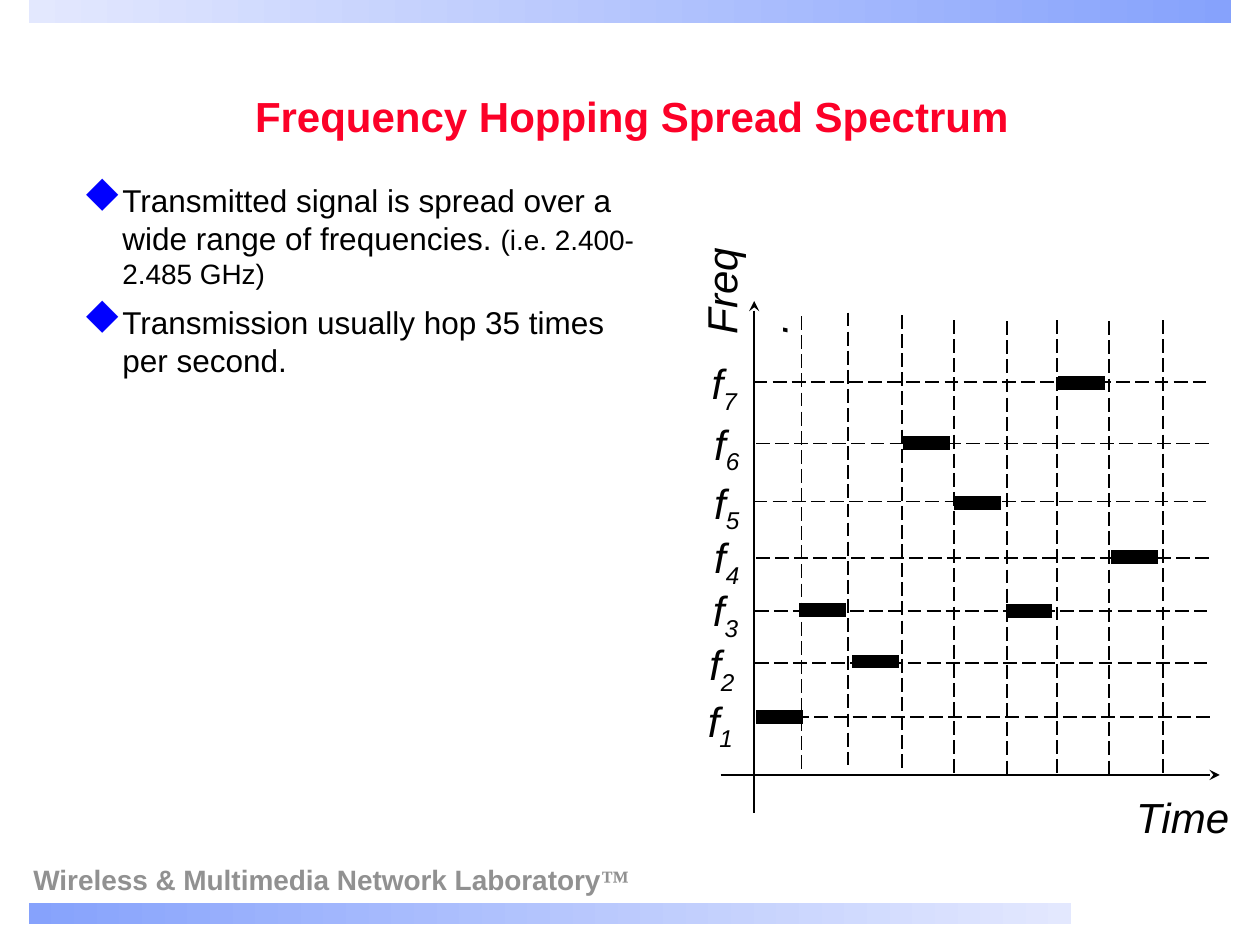
"""Build the frequency hopping spread spectrum slide."""
from typing import NamedTuple

from lxml import etree
from pptx import Presentation
from pptx import util as u
from pptx.dml.color import RGBColor
from pptx.enum import dml, shapes, text
from pptx.oxml.ns import qn

BLACK = RGBColor(0x00, 0x00, 0x00)
RED = RGBColor(0xFC, 0x01, 0x28)
GREY = RGBColor(0x91, 0x91, 0x91)
BLUE = RGBColor(0x86, 0xA2, 0xFC)
PALE_BLUE = RGBColor(0xE3, 0xE8, 0xFE)
BULLET_COLOR = RGBColor(0x00, 0x00, 0xFF)
BULLET_FONT = "Wingdings"
BULLET_DIAMOND = "u"

GRID_LENGTH = 258.7
HOP_LENGTH = 26.8


class Run(NamedTuple):
    words: str
    size: float
    color: RGBColor = BLACK
    font: str = "Arial"
    bold: bool = False
    italic: bool = False
    baseline: int = 0


class Box(NamedTuple):
    left: float
    top: float
    width: float
    height: float


class Bar(NamedTuple):
    box: Box
    start: RGBColor
    end: RGBColor


class Channel(NamedTuple):
    number: str
    label_left: float
    label_top: float
    line_left: float
    line_y: float


class Point(NamedTuple):
    x: float
    y: float


BARS = [
    Bar(Box(16.5, 516, 595.5, 12), BLUE, PALE_BLUE),
    Bar(Box(16.5, 0, 687, 13), PALE_BLUE, BLUE),
]
CHANNELS = [
    Channel("1", 397.4, 393.8, 432.7, 409.7),
    Channel("2", 398.2, 361.4, 431.3, 378.7),
    Channel("3", 400.3, 330.5, 431.3, 349.2),
    Channel("4", 401, 300.2, 432, 319),
    Channel("5", 401, 269.3, 430.6, 286.6),
    Channel("6", 401, 235.4, 432, 253.4),
    Channel("7", 399.6, 200.9, 430.6, 218.2),
]
SLOT_LINE_TOPS = [
    Point(458, 180.7), Point(484.6, 178.6), Point(515.5, 180), Point(545, 182.9),
    Point(575.3, 183.6), Point(604.1, 182.9), Point(633.6, 183.6), Point(664.6, 182.9),
]
HOPS = [
    Point(432, 409.7), Point(456.5, 348.5), Point(486.7, 378), Point(516.2, 253.4),
    Point(545, 287.3), Point(574.6, 349.2), Point(604.8, 218.9), Point(635, 318.2),
]
BULLETS = [
    [Run("Transmitted signal is spread over a wide range of frequencies. ", 18),
     Run("(i.e. 2.400-2.485 GHz)", 16)],
    [Run("Transmission usually hop 35 times per second.", 18)],
]


def add_bar(slide, bar: Bar) -> None:
    shape = slide.shapes.add_shape(shapes.MSO_SHAPE.RECTANGLE, *map(u.Pt, bar.box))
    shape.shadow.inherit = False
    shape.line.fill.background()
    shape.fill.gradient()
    shape.fill.gradient_angle = 0
    for stop, color in zip(shape.fill.gradient_stops, (bar.start, bar.end)):
        stop.color.rgb = color


def add_line(slide, start: Point, end: Point, width: float = 1,
             dashed: bool = False, arrow: str = "") -> None:
    line = slide.shapes.add_connector(
        shapes.MSO_CONNECTOR.STRAIGHT, *map(u.Pt, (*start, *end)))
    line.line.color.rgb = BLACK
    line.line.width = u.Pt(width)
    if dashed:
        line.line.dash_style = dml.MSO_LINE.LONG_DASH
    if arrow:
        etree.SubElement(line.line._get_or_add_ln(), qn(f"a:{arrow}"), type="stealth")
    etree.SubElement(line._element.spPr, qn("a:effectLst"))


def add_runs(paragraph, runs: list[Run]) -> None:
    for item in runs:
        run = paragraph.add_run()
        run.text = item.words
        run.font.name = item.font
        run.font.size = u.Pt(item.size)
        run.font.bold = item.bold
        run.font.italic = item.italic
        run.font.color.rgb = item.color
        if item.baseline:
            run._r.get_or_add_rPr().set("baseline", str(item.baseline))


def add_text(slide, box: Box, runs: list[Run], wrap: bool = False):
    shape = slide.shapes.add_textbox(*map(u.Pt, box))
    shape.text_frame.word_wrap = wrap
    add_runs(shape.text_frame.paragraphs[0], runs)
    return shape


def add_bullet(paragraph) -> None:
    properties = paragraph._p.get_or_add_pPr()
    properties.set("marL", str(u.Pt(22.5)))
    properties.set("indent", str(u.Pt(-22.5)))
    color = etree.SubElement(properties, qn("a:buClr"))
    etree.SubElement(color, qn("a:srgbClr"), val=str(BULLET_COLOR))
    etree.SubElement(properties, qn("a:buSzPct"), val="125000")
    etree.SubElement(properties, qn("a:buFont"), typeface=BULLET_FONT, charset="2")
    etree.SubElement(properties, qn("a:buChar"), char=BULLET_DIAMOND)


def add_wording(slide) -> None:
    footer = add_text(slide, Box(12, 491.3, 360, 24.5), [
        Run("Wireless & Multimedia Network Laboratory", 16, GREY, bold=True),
        Run("™", 16, GREY, "Times New Roman", bold=True)], wrap=True)
    footer.text_frame.paragraphs[0].line_spacing = 0.9

    title = add_text(slide, Box(44.6, 30.2, 633, 54),
                     [Run("Frequency Hopping Spread Spectrum", 24, RED, bold=True)], wrap=True)
    title.text_frame.vertical_anchor = text.MSO_ANCHOR.BOTTOM
    heading = title.text_frame.paragraphs[0]
    heading.alignment = text.PP_ALIGN.CENTER
    heading.line_spacing = 0.9

    body = add_text(slide, Box(40.3, 100, 332.6, 380), BULLETS[0], wrap=True)
    for runs in BULLETS[1:]:
        paragraph = body.text_frame.add_paragraph()
        add_runs(paragraph, runs)
        paragraph.space_before = u.Pt(7.5)
    for paragraph in body.text_frame.paragraphs:
        add_bullet(paragraph)


def add_diagram(slide) -> None:
    add_line(slide, Point(431, 172), Point(431, 464.4), arrow="headEnd")
    add_line(slide, Point(411.8, 442.8), Point(697, 442.8), arrow="tailEnd")
    for top in SLOT_LINE_TOPS:
        add_line(slide, top, Point(top.x, top.y + GRID_LENGTH), dashed=True)
    for channel in CHANNELS:
        start = Point(channel.line_left, channel.line_y)
        add_line(slide, start, Point(start.x + GRID_LENGTH, start.y), dashed=True)
        add_text(slide, Box(channel.label_left, channel.label_top, 30.2, 36), [
            Run("f", 24, italic=True),
            Run(channel.number, 24, italic=True, baseline=-25000)])
    for hop in HOPS:
        add_line(slide, Point(hop.x + HOP_LENGTH, hop.y), hop, width=8)
    add_text(slide, Box(642.2, 448.6, 67.7, 36), [Run("Time", 24, italic=True)])
    frequency = add_text(slide, Box(377.3, 145.7, 69, 36),
                         [Run("Freq.", 24, italic=True)], wrap=True)
    frequency.rotation = 270


def main() -> None:
    presentation = Presentation()
    presentation.slide_width = u.Pt(720)
    presentation.slide_height = u.Pt(540)
    slide = presentation.slides.add_slide(presentation.slide_layouts[6])
    for bar in BARS:
        add_bar(slide, bar)
    add_wording(slide)
    add_diagram(slide)
    presentation.save("out.pptx")


if __name__ == "__main__":
    main()
